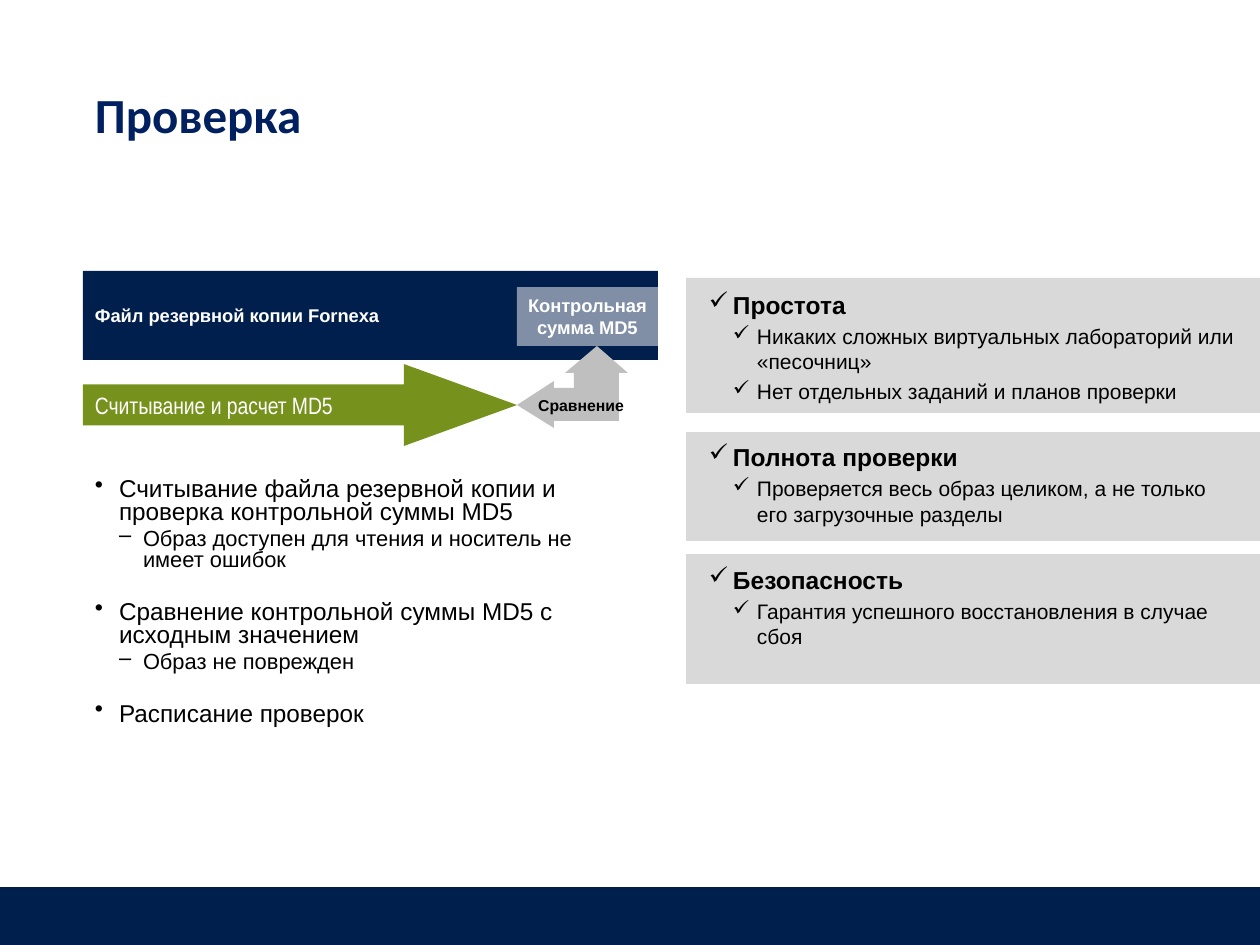
from lxml import etree
from pptx import Presentation
from pptx import util as u
from pptx.dml.color import RGBColor
from pptx.enum import shapes, text
from pptx.oxml.ns import qn

PX = 914400 / 126
COLORS = {"navy": "011F4D", "title": "002060", "green": "76911C", "silver": "BFBFBF",
          "panel": "D9D9D9", "white": "FFFFFF", "black": "000000"}
LEFT, TOP, MIDDLE, BOTTOM = (text.PP_ALIGN.LEFT, text.MSO_ANCHOR.TOP,
                             text.MSO_ANCHOR.MIDDLE, text.MSO_ANCHOR.BOTTOM)
CENTER = text.PP_ALIGN.CENTER
RECTANGLE = shapes.MSO_SHAPE.RECTANGLE
ARROW = shapes.MSO_SHAPE.RIGHT_ARROW

STEPS = [
    ("Считывание файла резервной копии и проверка контрольной суммы MD5",
     ["Образ доступен для чтения и носитель не имеет ошибок"]),
    ("Сравнение контрольной суммы MD5 с исходным значением", ["Образ не поврежден"]),
    ("Расписание проверок", []),
]
BENEFITS = [
    ("Простота", ["Никаких сложных виртуальных лабораторий или «песочниц»",
                  "Нет отдельных заданий и планов проверки"]),
    ("Полнота проверки",
     ["Проверяется весь образ целиком, а не только его загрузочные разделы"]),
    ("Безопасность", ["Гарантия успешного восстановления в случае сбоя"]),
]
PANELS = [(278, 135), (432, 109), (554, 130)]
COMPARE_OUTLINE = [(597, 346), (565, 373), (574, 373), (574, 388), (554, 388), (554, 381),
                   (517, 405), (554, 428), (554, 421), (619, 421), (619, 373), (628, 373)]


def px(value):
    return u.Emu(round(value * PX))


def paint(shape, color, opacity=None):
    shape.shadow.inherit = False
    shape.line.fill.background()
    shape.fill.solid()
    shape.fill.fore_color.rgb = RGBColor.from_string(COLORS[color])
    if opacity:
        fill_color = shape.fill._xPr.find(qn("a:solidFill"))[0]
        etree.SubElement(fill_color, qn("a:alpha"), val=str(opacity * 1000))
    return shape


def add_block(slide, box, color, kind=RECTANGLE, opacity=None):
    return paint(slide.shapes.add_shape(kind, *map(px, box)), color, opacity)


def add_text_box(slide, box):
    return slide.shapes.add_textbox(*map(px, box))


def write(shape, lines, size=14, font="Arial", color="black", bold=False, align=LEFT,
          anchor=MIDDLE, insets=(12, 6, 12, 6), spacing=None):
    frame = shape.text_frame
    frame.word_wrap = True
    frame.vertical_anchor = anchor
    (frame.margin_left, frame.margin_top,
     frame.margin_right, frame.margin_bottom) = map(px, insets)
    for index, line in enumerate(lines):
        words, style = line if isinstance(line, tuple) else (line, {})
        paragraph = frame.paragraphs[0] if index == 0 else frame.add_paragraph()
        paragraph.alignment = align
        if "bullet" in style:
            properties = paragraph._p.get_or_add_pPr()
            properties.set("marL", str(px(24 * (style["level"] + 1))))
            properties.set("indent", str(px(-24)))
            etree.SubElement(properties, qn("a:buChar"), char=style["bullet"])
            paragraph.level = style["level"]
            paragraph.space_before = u.Pt(style["before"] if index else 0)
        if spacing:
            paragraph.line_spacing = spacing
        run = paragraph.add_run()
        run.text = words
        run.font.name = font
        run.font.size = u.Pt(style.get("size", size))
        run.font.bold = style.get("bold", bold)
        run.font.color.rgb = RGBColor.from_string(COLORS[color])


def outline(groups, bullets, sizes, gap, bold=False):
    lines = []
    for heading, details in groups:
        lines.append((heading, dict(level=0, bullet=bullets[0], size=sizes[0],
                                    before=gap, bold=bold)))
        lines += [(detail, dict(level=1, bullet=bullets[1], size=sizes[1], before=2.5))
                  for detail in details]
    return lines


def main():
    presentation = Presentation()
    presentation.slide_width, presentation.slide_height = px(1260), px(945)
    slide = presentation.slides.add_slide(presentation.slide_layouts[6])

    add_block(slide, (0, 887, 1260, 58), "navy")
    write(add_text_box(slide, (83, 77, 352, 72)), ["Проверка"], size=28, font="Calibri",
          color="title", bold=True, anchor=BOTTOM)

    backup = add_block(slide, (83, 271, 575, 89), "navy")
    write(backup, ["Файл резервной копии Fornexa"], size=10.5, color="white", bold=True)
    checksum = add_block(slide, (517, 287, 141, 59), "white", opacity=50)
    write(checksum, ["Контрольная", "сумма MD5"], size=10.5, color="white", bold=True,
          align=CENTER, insets=(0, 0, 0, 0))

    reading = add_block(slide, (83, 364, 434, 82), "green", kind=ARROW)
    reading.adjustments[0], reading.adjustments[1] = 0.5, 1.38
    write(reading, ["Считывание и расчет MD5"], size=13.5, font="Arial Narrow",
          color="white", insets=(12, 0, 0, 0))

    builder = slide.shapes.build_freeform(*COMPARE_OUTLINE[0], scale=PX)
    builder.add_line_segments(COMPARE_OUTLINE[1:], close=True)
    compare = paint(builder.convert_to_shape(), "silver")
    write(compare, ["Сравнение"], size=9, bold=True, align=CENTER, insets=(17, 36, 0, 0))

    for top, height in PANELS:
        add_block(slide, (686, top, 574, height), "panel")
    write(add_text_box(slide, (697, 284, 557, 490)),
          outline(BENEFITS, "✓✓", (14, 12), gap=22, bold=True), anchor=TOP)
    write(add_text_box(slide, (83, 473, 547, 278)),
          outline(STEPS, "•–", (13.9, 12.5), gap=17), anchor=TOP, spacing=0.8)

    presentation.save("out.pptx")


if __name__ == "__main__":
    main()
